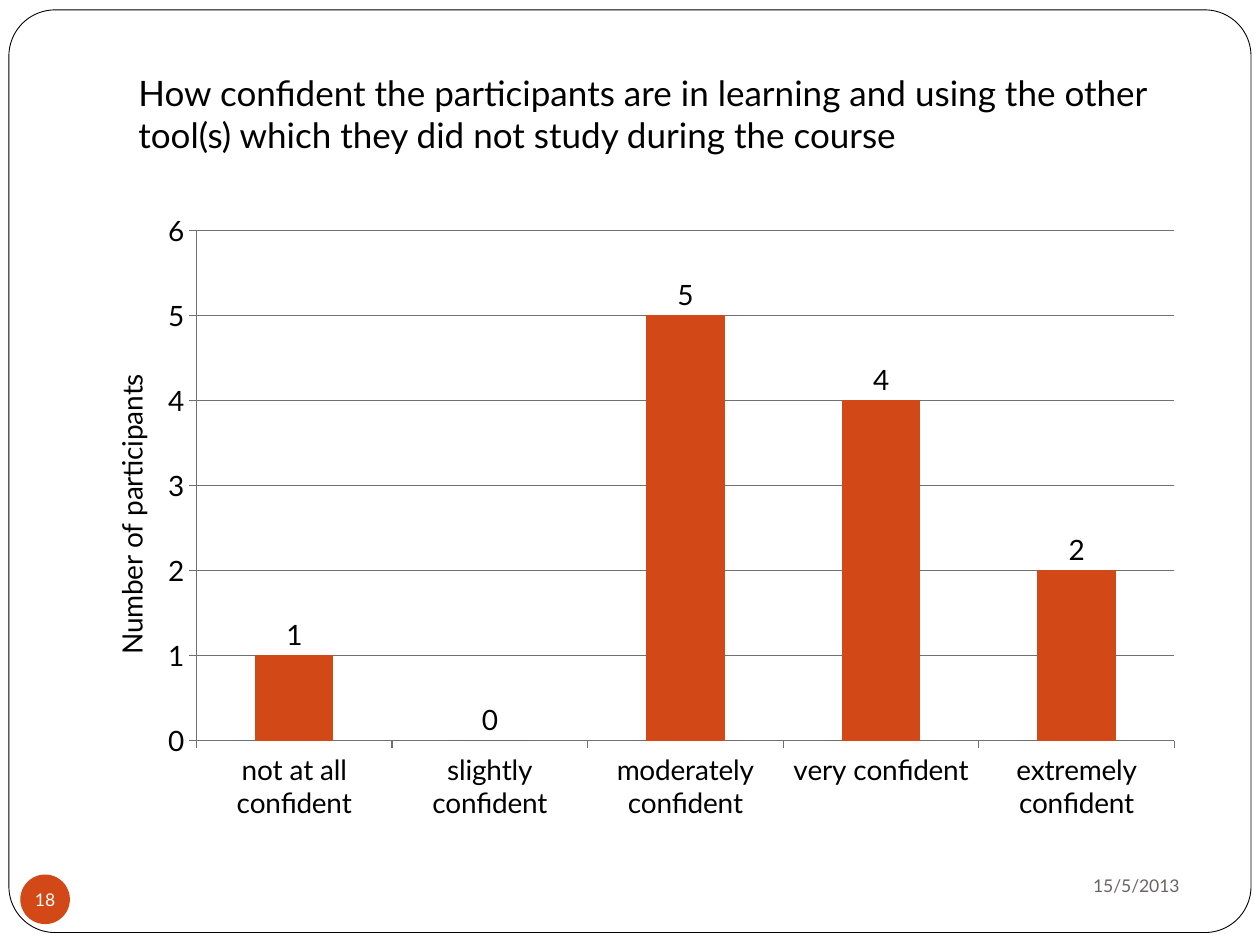
import pptx
import pptx.chart.data
import pptx.dml.color
import pptx.enum.chart
import pptx.enum.shapes
import pptx.enum.text
import pptx.oxml
import pptx.oxml.ns
import pptx.util
from pptx.util import Cm

FONT = "Lato"
INK, GREY, ACCENT, WHITE = "000000", "696464", "D34817", "FFFFFF"
RULE = "707070"
ALIGN = pptx.enum.text.PP_ALIGN
ANCHOR = pptx.enum.text.MSO_ANCHOR
SHAPE = pptx.enum.shapes.MSO_SHAPE
ANSWERS = {
    "not at all confident": 1,
    "slightly confident": 0,
    "moderately confident": 5,
    "very confident": 4,
    "extremely confident": 2,
}


def colour(value):
    """Turn a hex string into a colour."""
    return pptx.dml.color.RGBColor.from_string(value)


def style_font(font, size, ink=INK):
    """Set face, size and colour of a font."""
    font.name = FONT
    font.size = pptx.util.Pt(size)
    font.bold = False
    font.color.rgb = colour(ink)


def write(shape, text, size, ink, align, anchor, margins):
    """Put one formatted paragraph into a shape."""
    frame = shape.text_frame
    frame.text = text
    frame.word_wrap = True
    frame.auto_size = pptx.enum.text.MSO_AUTO_SIZE.NONE
    frame.vertical_anchor = anchor
    (frame.margin_left, frame.margin_top,
     frame.margin_right, frame.margin_bottom) = (Cm(margin) for margin in margins)
    para = frame.paragraphs[0]
    para.alignment = align
    for span in para.runs:
        style_font(span.font, size, ink)


def add_plain_shape(page, kind, box, fill):
    """Add a filled shape without outline or shadow."""
    shape = page.shapes.add_shape(kind, *box)
    shape.shadow.inherit = False
    shape.fill.solid()
    shape.fill.fore_color.rgb = colour(fill)
    shape.line.fill.background()
    return shape


def add_frame(page, box):
    """Draw the rounded page border behind everything else."""
    border = add_plain_shape(page, SHAPE.ROUNDED_RECTANGLE, box, WHITE)
    border.adjustments[0] = 0.05
    border.line.color.rgb = colour(INK)
    border.line.width = pptx.util.Pt(0.5)
    page.shapes._spTree.insert(2, border._element)


def add_title(page, box, text):
    """Place and format the title placeholder."""
    title = page.shapes.title
    title.left, title.top, title.width, title.height = box
    write(title, text, 20, INK, ALIGN.LEFT, ANCHOR.BOTTOM, (0.25, 0.13, 0.25, 0.25))


def add_footer(page, left, top, date, number):
    """Place the number badge and the date at the foot of the page."""
    date_box = page.shapes.add_textbox(left + Cm(16.74), top - Cm(0.43), Cm(6.88), Cm(1.32))
    write(date_box, date, 10, GREY, ALIGN.RIGHT, ANCHOR.MIDDLE, (0.25, 0.13, 0.25, 0.13))
    badge = add_plain_shape(page, SHAPE.OVAL, (left, top, Cm(1), Cm(1)), ACCENT)
    write(badge, number, 10, WHITE, ALIGN.CENTER, ANCHOR.MIDDLE, (0, 0, 0, 0))


def make_layout(target="", **fractions):
    """Build a manual chart layout from fractions of the chart area."""
    modes = "".join(f'<c:{axis}Mode val="edge"/>' for axis in "xy")
    sizes = "".join(f'<c:{key} val="{value}"/>' for key, value in fractions.items())
    space = pptx.oxml.ns.nsdecls("c")
    return pptx.oxml.parse_xml(
        f"<c:layout {space}><c:manualLayout>{target}{modes}{sizes}"
        "</c:manualLayout></c:layout>")


def replace_layout(parent, layout, index):
    """Give a chart part its manual layout."""
    for old in parent.findall(pptx.oxml.ns.qn("c:layout")):
        parent.remove(old)
    parent.insert(index, layout)


def style_axis(axis):
    """Set ticks, line and label font of an axis."""
    axis.major_tick_mark = pptx.enum.chart.XL_TICK_MARK.OUTSIDE
    axis.minor_tick_mark = pptx.enum.chart.XL_TICK_MARK.NONE
    axis.format.line.color.rgb = colour(RULE)
    axis.format.line.width = pptx.util.Pt(0.75)
    style_font(axis.tick_labels.font, 16)


def add_confidence_chart(page, box, answers, axis_title):
    """Add the column chart of answers."""
    data = pptx.chart.data.CategoryChartData()
    data.categories = list(answers)
    data.add_series("Series 1", list(answers.values()))
    kind = pptx.enum.chart.XL_CHART_TYPE.COLUMN_CLUSTERED
    chart = page.shapes.add_chart(kind, *box, data).chart
    chart.has_title = False
    chart.has_legend = False
    style_font(chart.font, 18)
    chart.font.name = "Times New Roman"

    plot = chart.plots[0]
    plot.gap_width = 150
    plot.vary_by_categories = False
    fill = plot.series[0].format.fill
    fill.solid()
    fill.fore_color.rgb = colour(ACCENT)
    labels = plot.series[0].data_labels
    labels.show_value = True
    labels.position = pptx.enum.chart.XL_LABEL_POSITION.OUTSIDE_END
    style_font(labels.font, 16)

    style_axis(chart.category_axis)
    counts = chart.value_axis
    style_axis(counts)
    counts.minimum_scale, counts.maximum_scale, counts.major_unit = 0, 6, 1
    counts.has_major_gridlines = True
    counts.major_gridlines.format.line.color.rgb = colour(RULE)
    counts.major_gridlines.format.line.width = pptx.util.Pt(0.75)
    counts.axis_title.text_frame.text = axis_title
    style_font(counts.axis_title.text_frame.paragraphs[0].runs[0].font, 16)

    replace_layout(counts.axis_title._element, make_layout(x=0.03, y=0.27), 1)
    plot_area = plot._element.getparent()
    inner = '<c:layoutTarget val="inner"/>'
    replace_layout(plot_area, make_layout(inner, x=0.11, y=0.05, w=0.87, h=0.81), 0)


def main():
    """Build and save the deck."""
    deck = pptx.Presentation()
    deck.slide_width, deck.slide_height = Cm(25.4), Cm(19.05)
    page = deck.slides.add_slide(deck.slide_layouts[5])
    add_frame(page, (Cm(0.18), Cm(0.2), Cm(25.04), Cm(18.6)))
    add_title(page, (Cm(2.54), Cm(0.2), Cm(21.59), Cm(3.18)),
              "How confident the participants are in learning and using the other "
              "tool(s) which they did not study during the course")
    add_footer(page, Cm(0.41), Cm(17.63), "15/5/2013", "18")
    add_confidence_chart(page, (Cm(1.47), Cm(4.01), Cm(22.66), Cm(12.7)),
                         ANSWERS, "Number of participants")
    deck.save("out.pptx")


if __name__ == "__main__":
    main()
